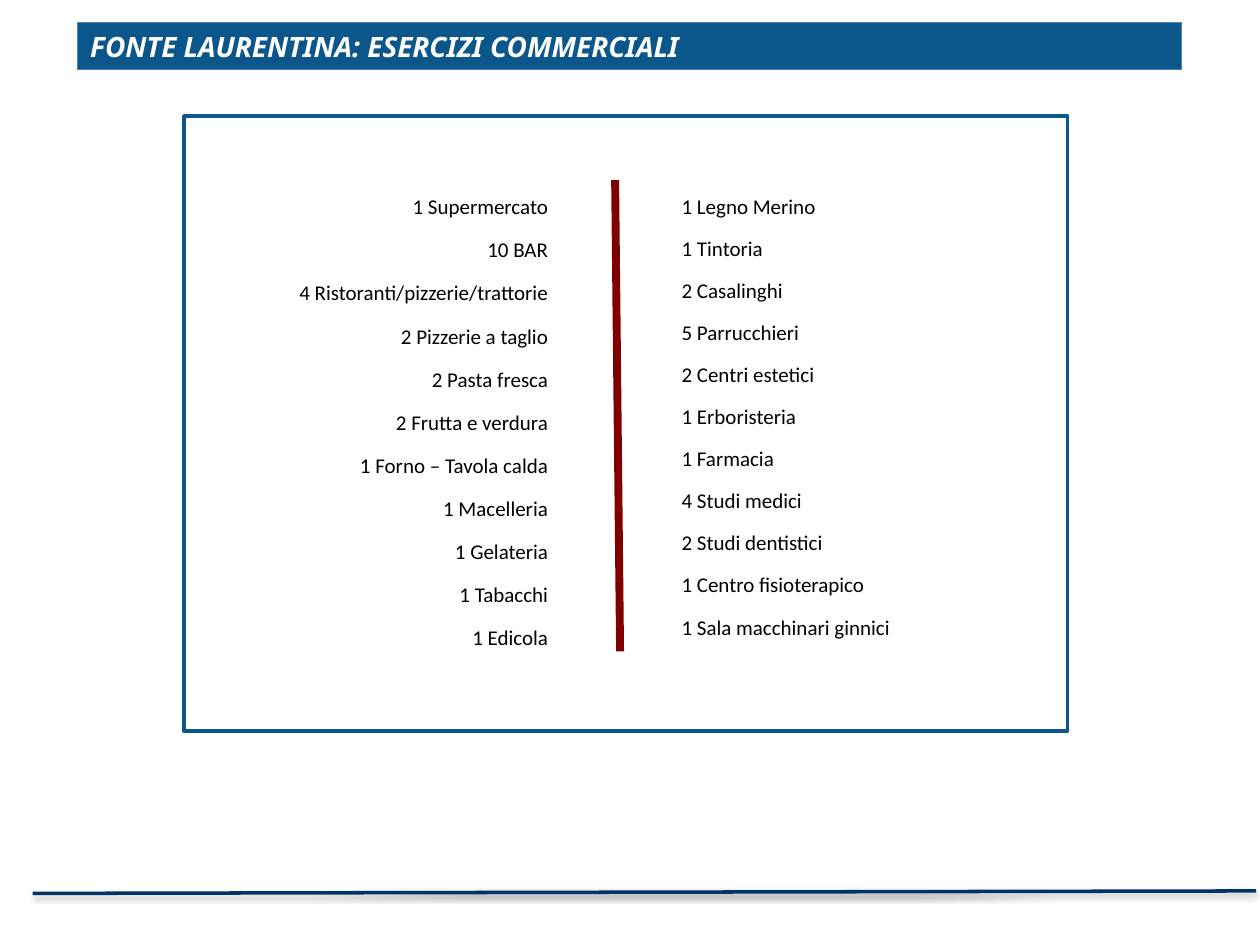
import pptx
import pptx.util
import pptx.dml.color
import pptx.enum.shapes
import pptx.enum.text
import pptx.oxml

Cm = pptx.util.Cm
Pt = pptx.util.Pt
ALIGN = pptx.enum.text.PP_ALIGN
RECTANGLE = pptx.enum.shapes.MSO_SHAPE.RECTANGLE
COLORS = {
    "navy": "003366",
    "blue": "0B578B",
    "edge": "4F81BD",
    "maroon": "800000",
    "white": "FFFFFF",
    "black": "000000",
}
NS = 'xmlns:a="http://schemas.openxmlformats.org/drawingml/2006/main"'
NO_SHADOW = f"<a:effectLst {NS}/>"
SOFT_SHADOW = (
    f'<a:effectLst {NS}><a:outerShdw blurRad="{Pt(3.1)}" dist="{Pt(1.6)}" '
    f'dir="5400000" rotWithShape="0"><a:srgbClr val="{COLORS["black"]}">'
    '<a:alpha val="38000"/></a:srgbClr></a:outerShdw></a:effectLst>'
)


def paint(color_format, name):
    color_format.rgb = pptx.dml.color.RGBColor.from_string(COLORS[name])


def draw_rule(ends, color, width, effect):
    rule = slide.shapes.add_connector(
        pptx.enum.shapes.MSO_CONNECTOR.STRAIGHT, *[Cm(end) for end in ends]
    )
    paint(rule.line.color, color)
    rule.line.width = Pt(width)
    rule._element.spPr.append(pptx.oxml.parse_xml(effect))


deck = pptx.Presentation()
deck.slide_width = Cm(25.4)
deck.slide_height = Cm(19.05)
slide = deck.slides.add_slide(deck.slide_layouts[6])

draw_rule((0.66, 18.01, 25.32, 17.96), "navy", 2, SOFT_SHADOW)

banner = slide.shapes.add_shape(RECTANGLE, Cm(1.57), Cm(0.46), Cm(22.25), Cm(0.94))
banner.shadow.inherit = False
banner.fill.solid()
paint(banner.fill.fore_color, "blue")
paint(banner.line.color, "edge")
banner.line.width = Pt(0.75)
title = banner.text_frame.paragraphs[0]
title.alignment = ALIGN.LEFT
title_run = title.add_run()
title_run.text = "FONTE LAURENTINA: ESERCIZI COMMERCIALI"
title_format = {"name": "Noto Sans", "size": Pt(16), "bold": True, "italic": True}
for attribute, value in title_format.items():
    setattr(title_run.font, attribute, value)
paint(title_run.font.color, "white")

food_shops = [
    "1 Supermercato",
    "10 BAR",
    "4 Ristoranti/pizzerie/trattorie",
    "2 Pizzerie a taglio",
    "2 Pasta fresca",
    "2 Frutta e verdura",
    "1 Forno – Tavola calda",
    "1 Macelleria",
    "1 Gelateria",
    "1 Tabacchi",
    "1 Edicola",
]
other_services = [
    "1 Legno Merino",
    "1 Tintoria",
    "2 Casalinghi",
    "5 Parrucchieri",
    "2 Centri estetici",
    "1 Erboristeria",
    "1 Farmacia",
    "4 Studi medici",
    "2 Studi dentistici",
    "1 Centro fisioterapico",
    "1 Sala macchinari ginnici",
]
columns = [
    (3.91, 7.39, food_shops, {"alignment": ALIGN.RIGHT, "space_after": Pt(3)}),
    (13.49, 7.09, other_services, {"alignment": ALIGN.LEFT, "space_before": Pt(2.4)}),
]
entry_format = {"name": "Calibri", "size": Pt(12)}
for left, width, entries, spacing in columns:
    column = slide.shapes.add_textbox(Cm(left), Cm(3.53), Cm(width), Cm(9.77)).text_frame
    column.word_wrap = True
    for index, entry in enumerate(entries):
        line = column.add_paragraph() if index else column.paragraphs[0]
        for attribute, value in {"line_spacing": 1.5, **spacing}.items():
            setattr(line, attribute, value)
        entry_run = line.add_run()
        entry_run.text = entry
        for attribute, value in entry_format.items():
            setattr(entry_run.font, attribute, value)
        paint(entry_run.font.color, "black")

draw_rule((12.4, 3.63, 12.5, 13.13), "maroon", 4.5, NO_SHADOW)

frame = slide.shapes.add_shape(RECTANGLE, Cm(3.71), Cm(2.34), Cm(17.81), Cm(12.4))
frame.shadow.inherit = False
frame.fill.background()
paint(frame.line.color, "blue")
frame.line.width = Pt(2)

deck.save("out.pptx")
